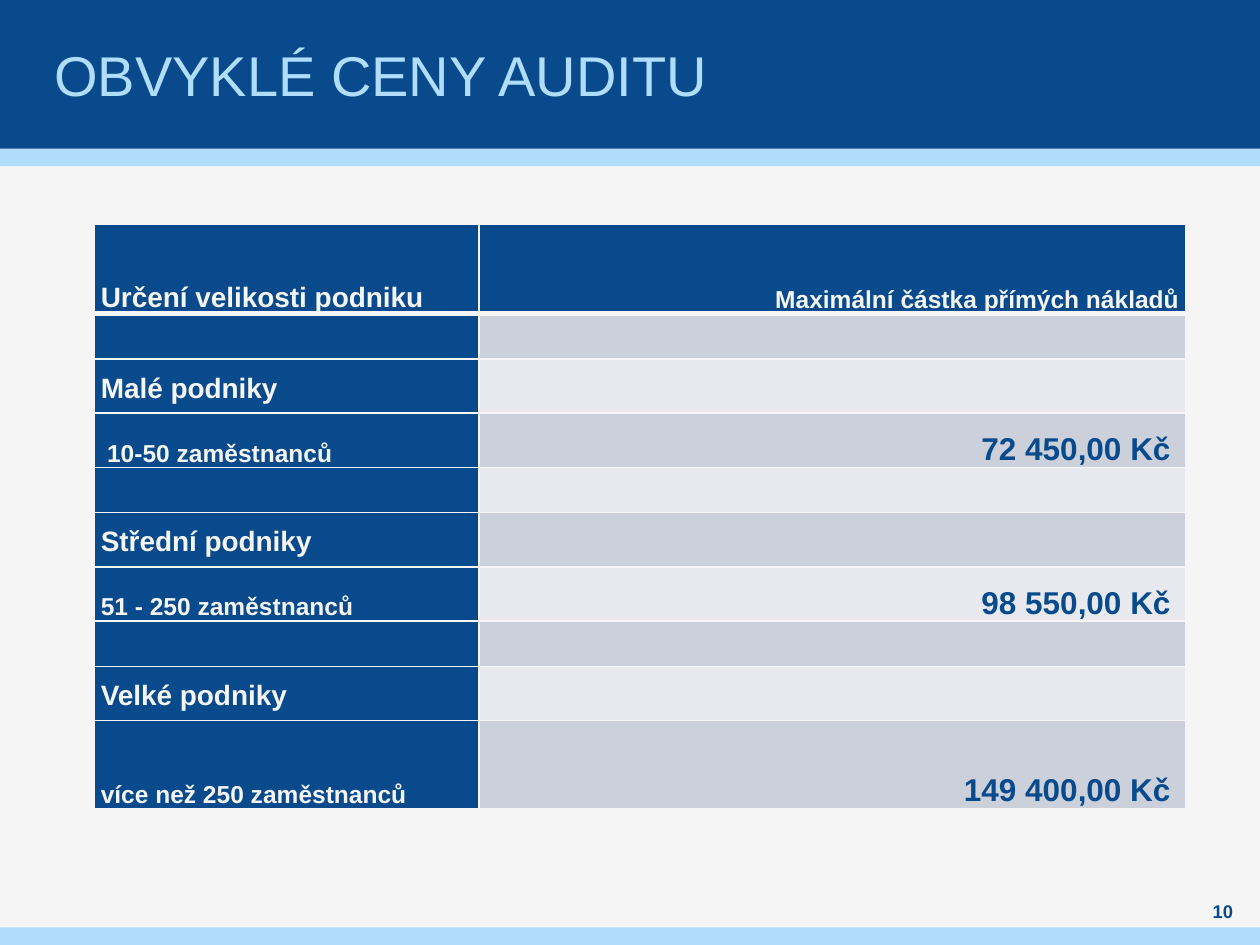
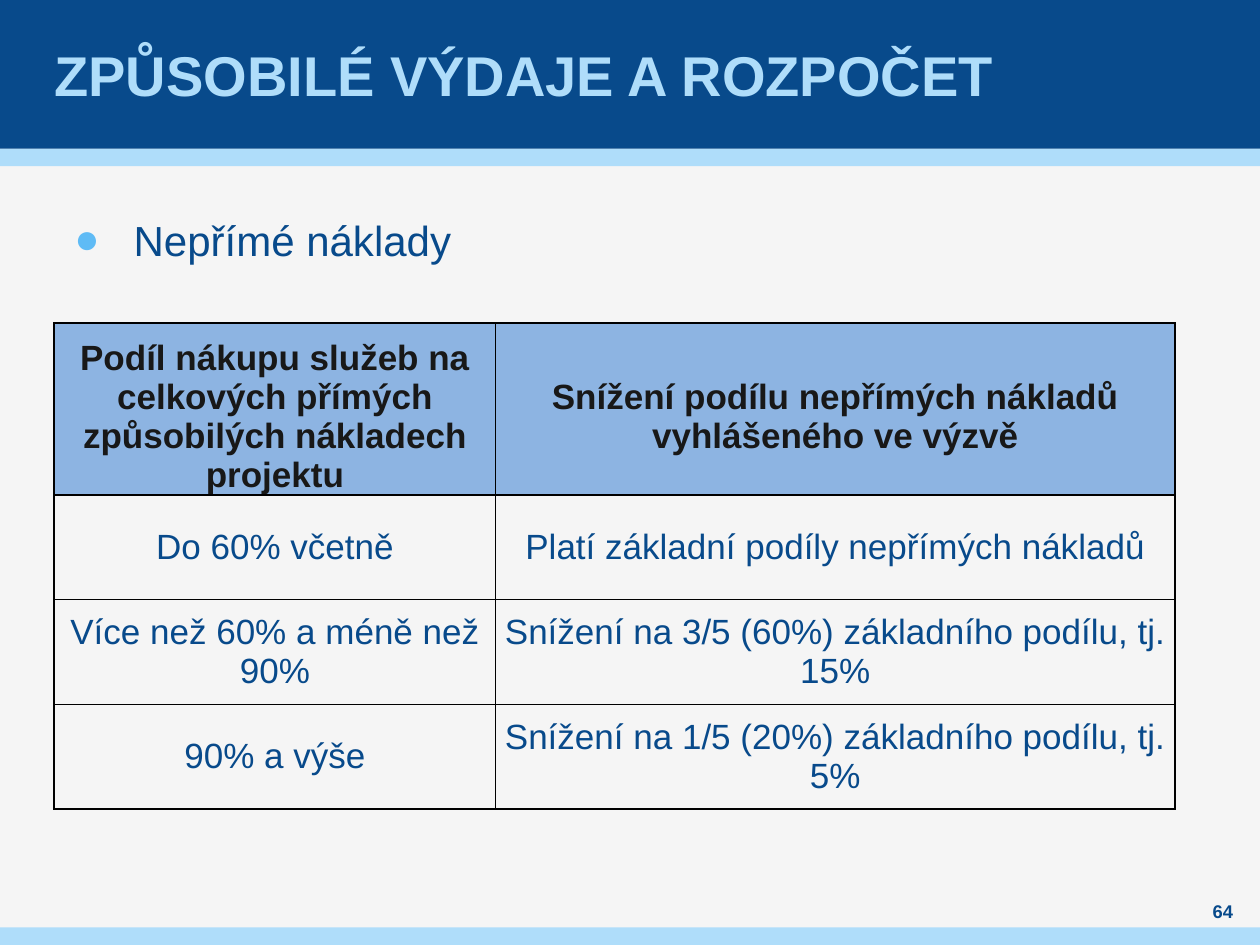
from dataclasses import dataclass

from lxml.etree import SubElement
from pptx import Presentation
from pptx.dml.color import RGBColor as RGB
from pptx.enum.shapes import MSO_SHAPE as SHAPE
from pptx.enum.text import MSO_ANCHOR as ANCHOR, MSO_AUTO_SIZE as AUTO, PP_ALIGN as ALIGN
from pptx.oxml.ns import qn
from pptx.util import Emu, Inches, Pt


@dataclass(frozen=True)
class Theme:
    font: str = "Arial"
    paper: str = "F5F5F5"
    navy: str = "084A8B"
    sky: str = "AFDDFA"
    bullet: str = "5FBBF5"
    stripe_dark: str = "CCD0DA"
    stripe_light: str = "E7E9EE"
    header: str = "8DB4E2"
    ink: str = "181818"
    line: str = "000000"
    title: float = 32
    body: float = 24
    cell: float = 20
    price: float = 18
    group: float = 16
    detail: float = 14
    number: float = 10.5


T = Theme()
prs = Presentation()
prs.slide_width, prs.slide_height = Inches(10), Inches(7.5)
COL, ROW = prs.slide_width / 100, prs.slide_height / 100


def box(x, y, w, h):
    return [Emu(round(n)) for n in (x * COL, y * ROW, w * COL, h * ROW)]


def write(tf, text, size, color, bold=False, **para):
    p = tf.paragraphs[0]
    for key, value in para.items():
        setattr(p, key, value)
    r = p.add_run()
    r.text = text
    for key, value in dict(name=T.font, size=Pt(size), bold=bold).items():
        setattr(r.font, key, value)
    r.font.color.rgb = RGB.from_string(color)
    return p


left = dict(alignment=ALIGN.LEFT, line_spacing=1.15)
right = dict(alignment=ALIGN.RIGHT, line_spacing=1.15)
center = dict(alignment=ALIGN.CENTER)
low, mid = dict(vertical_anchor=ANCHOR.BOTTOM), dict(vertical_anchor=ANCHOR.MIDDLE)

styles = {
    "group": (dict(size=T.group, color=T.paper, bold=True, **left), mid),
    "group_head": (dict(size=T.group, color=T.paper, bold=True, **left), low),
    "price_head": (dict(size=T.detail, color=T.paper, bold=True, **right), low),
    "detail": (dict(size=T.detail, color=T.paper, bold=True, **left), low),
    "detail_in": (dict(size=T.detail, color=T.paper, bold=True, **left),
                  dict(low, margin_left=Inches(0.1))),
    "price": (dict(size=T.price, color=T.navy, bold=True, **right),
              dict(low, margin_right=Inches(0.12))),
    "head": (dict(size=T.cell, color=T.ink, bold=True, **center), low),
    "head_up": (dict(size=T.cell, color=T.ink, bold=True, **center),
                dict(low, margin_bottom=Inches(0.31))),
    "plain": (dict(size=T.cell, color=T.navy, **center), mid),
}

blank = (None, None)
stripes = [(T.navy, T.stripe_dark), (T.navy, T.stripe_light)]
pages = [
    dict(
        title="OBVYKLÉ CENY AUDITU", bold=False, number="10", bullet=None,
        at=(7.5, 23.73), margin=0.05, line=T.paper,
        cols=[30.5, 56.1],
        rows=[9.47, *[4.8, 5.73, 5.73] * 2, 4.8, 5.73, 9.33],
        across=[1, 3] + [1] * 9, down=[1, 1, 1],
        fills=[(T.navy, T.navy)] + [stripes[i % 2] for i in range(9)],
        cells=[
            (("Určení velikosti podniku", "group_head"),
             ("Maximální částka přímých nákladů", "price_head")),
            (blank, blank),
            (("Malé podniky", "group"), blank),
            (("10-50 zaměstnanců", "detail_in"), ("72 450,00 Kč", "price")),
            (blank, blank),
            (("Střední podniky", "group"), blank),
            (("51 - 250 zaměstnanců", "detail"), ("98 550,00 Kč", "price")),
            (blank, blank),
            (("Velké podniky", "group"), blank),
            (("více než 250 zaměstnanců", "detail"), ("149 400,00 Kč", "price")),
        ],
    ),
    dict(
        title="ZPŮSOBILÉ VÝDAJE A ROZPOČET", bold=True, number="64", bullet="Nepřímé náklady",
        at=(4.3, 34.2), margin=0.01, line=T.line,
        cols=[35.05, 53.9],
        rows=[18.2] + [11.07] * 3,
        across=[1, 1, 0.5, 0.5, 1], down=[1, 0.5, 1],
        fills=[(T.header, T.header)] + [(None, None)] * 3,
        cells=[
            (("Podíl nákupu služeb na celkových přímých způsobilých nákladech projektu", "head"),
             ("Snížení podílu nepřímých nákladů vyhlášeného ve výzvě", "head_up")),
            (("Do 60% včetně", "plain"),
             ("Platí základní podíly nepřímých nákladů", "plain")),
            (("Více než 60% a méně než 90%", "plain"),
             ("Snížení na 3/5 (60%) základního podílu, tj. 15%", "plain")),
            (("90% a výše", "plain"),
             ("Snížení na 1/5 (20%) základního podílu, tj. 5%", "plain")),
        ],
    ),
]

master = prs.slide_master
master.background.fill.solid()
master.background.fill.fore_color.rgb = RGB.from_string(T.paper)
slides = [prs.slides.add_slide(prs.slide_layouts[5]) for _ in pages]

bands = [(15.73, 1.87, T.sky), (0, 15.73, T.navy), (98.13, 1.87, T.sky)]
for i, (top, height, color) in enumerate(bands):
    sp = slides[0].shapes.add_shape(SHAPE.RECTANGLE, *box(0, top, 100, height))
    sp.shadow.inherit = False
    sp.fill.solid()
    sp.fill.fore_color.rgb = RGB.from_string(color)
    sp.line.fill.background()
    sp.element.nvSpPr.cNvPr.set("id", str(100 + i))
    master.shapes.element.insert(2 + i, sp.element)

for s, page in zip(slides, pages):
    title = s.shapes.title
    title.left, title.top, title.width, title.height = box(3.9, 0, 92.1, 15.73)
    number = s.shapes.add_textbox(*box(94.5, 95.07, 5.1, 2.67))
    frames = [(title.text_frame, 0.04, ANCHOR.MIDDLE), (number.text_frame, 0, ANCHOR.MIDDLE)]
    if page["bullet"]:
        body = s.shapes.add_textbox(*box(5.9, 22.67, 88.2, 8))
        frames.append((body.text_frame, 0, ANCHOR.TOP))
        p = write(body.text_frame, page["bullet"], T.body, T.navy, line_spacing=Pt(28.8),
                  space_before=Pt(6), space_after=Pt(6))
        pPr = p._p.get_or_add_pPr()
        pPr.set("marL", str(Inches(0.47)))
        pPr.set("indent", str(-Inches(0.47)))
        SubElement(SubElement(pPr, qn("a:buClr")), qn("a:srgbClr"), val=T.bullet)
        SubElement(pPr, qn("a:buFont"), typeface=T.font)
        SubElement(pPr, qn("a:buChar"), char="●")
    for tf, side, anchor in frames:
        form = dict(word_wrap=True, auto_size=AUTO.NONE, vertical_anchor=anchor,
                    margin_left=Inches(side), margin_right=Inches(side),
                    margin_top=0, margin_bottom=0)
        for key, value in form.items():
            setattr(tf, key, value)
    write(title.text_frame, page["title"], T.title, T.sky, page["bold"], alignment=ALIGN.LEFT)
    write(number.text_frame, page["number"], T.number, T.navy, True, **center)

    cols, rows = page["cols"], page["rows"]
    area = box(*page["at"], sum(cols), sum(rows))
    table = s.shapes.add_table(len(rows), len(cols), *area).table
    table.first_row = table.horz_banding = False
    for column, width in zip(table.columns, cols):
        column.width = Emu(round(width * COL))
    for row, height in zip(table.rows, rows):
        row.height = Emu(round(height * ROW))

    for i, line in enumerate(page["cells"]):
        for j, (text, style) in enumerate(line):
            cell = table.cell(i, j)
            side = Inches(page["margin"])
            form = dict(margin_left=side, margin_right=side, margin_top=0, margin_bottom=0)
            if text:
                font, place = styles[style]
                form.update(place)
                write(cell.text_frame, text, **font)
            for key, value in form.items():
                setattr(cell, key, value)

            across, down = page["across"], page["down"]
            edges = dict(lnL=down[j], lnR=down[j + 1], lnT=across[i], lnB=across[i + 1])
            tcPr = cell._tc.get_or_add_tcPr()
            for edge, width in edges.items():
                ln = SubElement(tcPr, qn(f"a:{edge}"), w=str(Pt(width)))
                SubElement(SubElement(ln, qn("a:solidFill")), qn("a:srgbClr"), val=page["line"])
            color = page["fills"][i][j]
            if color:
                cell.fill.solid()
                cell.fill.fore_color.rgb = RGB.from_string(color)
            else:
                cell.fill.background()

prs.save("out.pptx")
